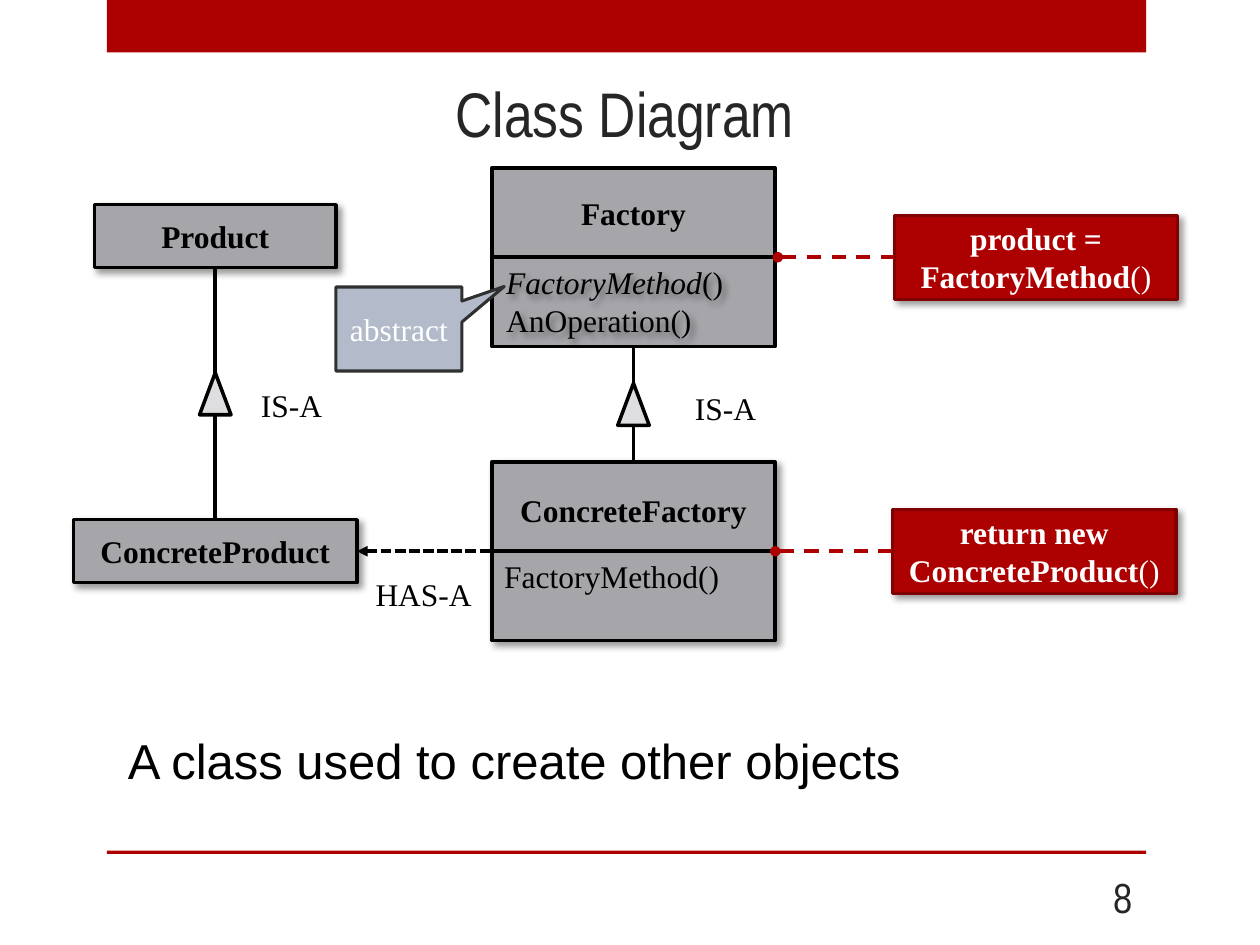
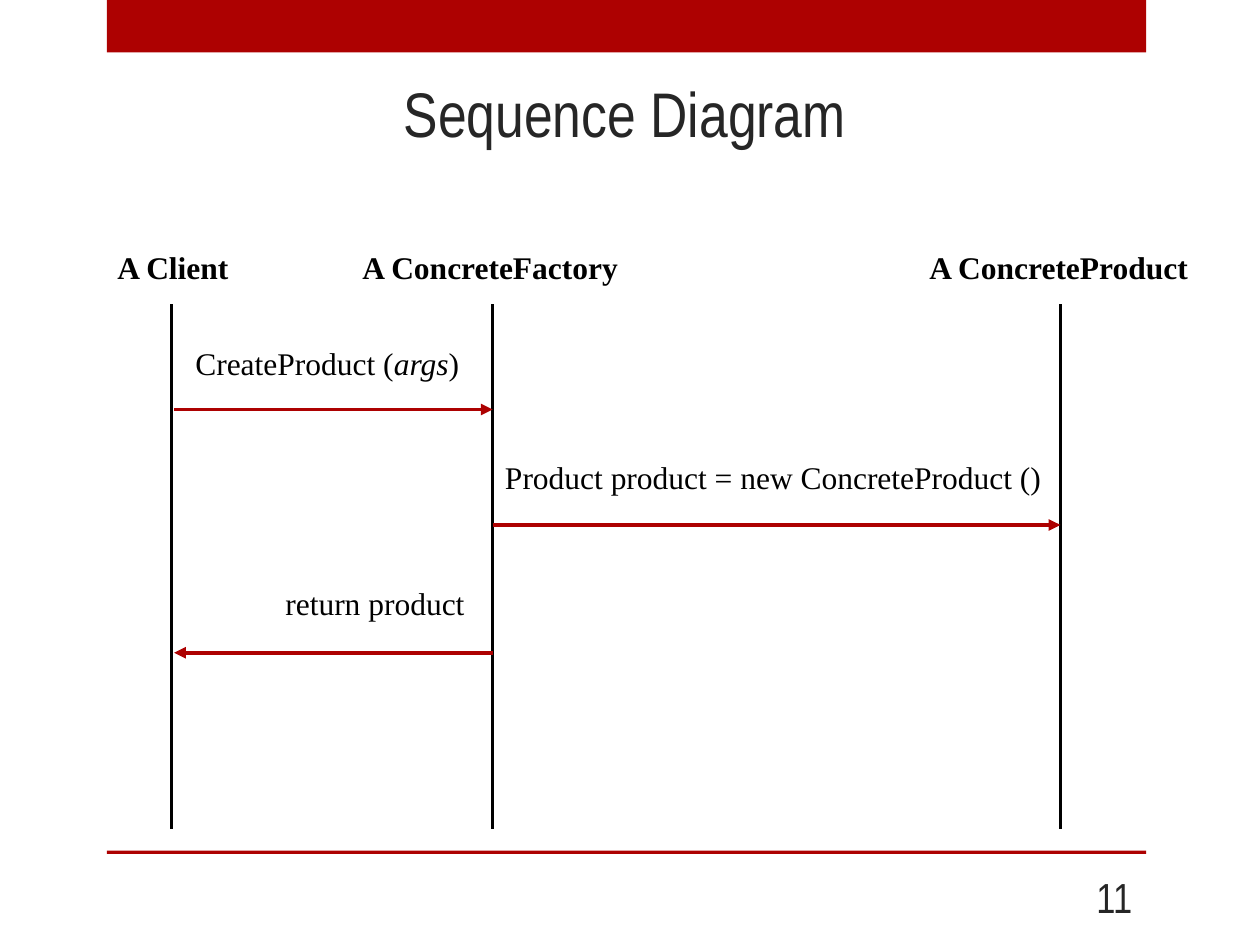
from dataclasses import dataclass

from pptx import Presentation
from pptx.dml.color import RGBColor
from pptx.enum.dml import MSO_LINE
from pptx.enum.shapes import MSO_CONNECTOR, MSO_SHAPE
from pptx.enum.text import MSO_ANCHOR, PP_ALIGN
from pptx.oxml.ns import qn
from pptx.util import Pt
from lxml.etree import SubElement


@dataclass(frozen=True)
class Theme:
    red: str = "AD0101"
    dark_red: str = "800101"
    ink: str = "262626"
    black: str = "000000"
    white: str = "FFFFFF"
    class_gray: str = "A5A5AA"
    arrow_gray: str = "DEDEE0"
    callout_blue: str = "B3BBCB"
    callout_line: str = "303030"
    heading_font: str = "Arial Narrow"
    summary_font: str = "Arial"
    diagram_font: str = "Times New Roman"
    title_size: float = 36
    number_size: float = 24
    summary_size: float = 28
    label_size: float = 18
    line_width: float = 2
    edge_width: float = 1.75
    message_width: float = 2.25


THEME = Theme()
LABEL_HEIGHT = 28.8

# Text is a list of paragraphs; each paragraph is a list of (words, style) runs.
# Boxes are left, top, width, height.
CLASSES = {
    "Product": {"box": (54, 117, 138, 36)},
    "ConcreteProduct": {"box": (42, 297, 162, 36)},
    "ConcreteFactory": {
        "box": (281, 264, 162, 102), "name_drop": 1.8,
        "methods": [[("FactoryMethod()", "")]],
    },
    "Factory": {
        "box": (281, 96, 162, 102), "shadow": False, "methods_shift": 1.2,
        "methods": [[("FactoryMethod", "i"), ("()", "")], [("AnOperation()", "")]],
    },
}
# class, left of the note, start of its dashed line, text
NOTES = [
    ("ConcreteFactory", 510, 443, [[("return new ConcreteProduct", "b"), ("()", "")]]),
    ("Factory", 511, 444.5, [[("product = FactoryMethod", "b"), ("()", "")]]),
]
# parent, child, top of the triangle
INHERITANCE = [("Factory", "ConcreteFactory", 219), ("Product", "ConcreteProduct", 213)]
# words, left, top, width
RELATION_LABELS = [("IS-A", 142, 217, 49.5), ("HAS-A", 207.5, 325, 70), ("IS-A", 390, 219, 49.5)]
SUMMARY = ("A class used to create other objects", (66, 414, 461.5, 41))
CALLOUT = ("abstract", (192, 164, 72, 48), (0.836, -0.507))

# name, x of the lifeline, left and width of the heading
LIFELINES = [
    ("A Client", 98, 60, 78.5),
    ("A ConcreteFactory", 281.5, 200, 162),
    ("A ConcreteProduct", 606, 524, 164),
]
# runs, start x, end x, y, left, top and width of the label
MESSAGES = [
    ([("CreateProduct (", ""), ("args", "i"), (")", "")], 99.5, 281.5, 234, 104.5, 193, 167),
    ([("Product product = new ConcreteProduct ()", "")], 281.5, 606, 300, 281.5, 258, 324),
    ([("return product", "")], 282, 99.5, 373, 156, 330, 118),
]


def color(value):
    return RGBColor.from_string(value)


def points(values):
    return [Pt(value) for value in values]


def add_shadow(shape):
    effects = SubElement(shape._element.spPr, qn("a:effectLst"))
    shadow = SubElement(effects, qn("a:outerShdw"), blurRad=str(Pt(4)), dist=str(Pt(3)),
                        dir=str(45 * 60000), algn="tl", rotWithShape="0")
    black = SubElement(shadow, qn("a:srgbClr"), val=THEME.black)
    SubElement(black, qn("a:alpha"), val="40000")


def write(shape, paragraphs, fill=THEME.black, size=THEME.label_size, font=THEME.diagram_font,
          align=PP_ALIGN.LEFT, anchor=MSO_ANCHOR.TOP, wrap=True):
    frame = shape.text_frame
    frame.word_wrap = wrap
    frame.vertical_anchor = anchor
    for index, runs in enumerate(paragraphs):
        paragraph = frame.add_paragraph() if index else frame.paragraphs[0]
        paragraph.alignment = align
        for words, style in runs:
            run = paragraph.add_run()
            run.text = words
            run.font.name = font
            run.font.size = Pt(size)
            run.font.bold = style == "b"
            run.font.italic = style == "i"
            run.font.color.rgb = color(fill)


def add_text(slide, box, paragraphs, **style):
    shape = slide.shapes.add_textbox(*points(box))
    write(shape, paragraphs, **style)
    return shape


def add_label(slide, left, top, width, runs):
    add_text(slide, (left, top, width, LABEL_HEIGHT), [runs], wrap=False)


def add_box(slide, box, fill, line=None, width=THEME.line_width, kind=MSO_SHAPE.RECTANGLE,
            shadow=False):
    shape = slide.shapes.add_shape(kind, *points(box))
    shape.fill.solid()
    shape.fill.fore_color.rgb = color(fill)
    if line:
        shape.line.color.rgb = color(line)
        shape.line.width = Pt(width)
    else:
        shape.line.fill.background()
    if shadow:
        add_shadow(shape)
    else:
        shape.shadow.inherit = False
    return shape


def add_line(slide, start, end, line=THEME.black, width=THEME.line_width, dash=None,
             head=None, tail=None):
    connector = slide.shapes.add_connector(MSO_CONNECTOR.STRAIGHT, *points(start + end))
    connector.line.color.rgb = color(line)
    connector.line.width = Pt(width)
    if dash:
        connector.line.dash_style = dash
    outline = connector.line._get_or_add_ln()
    for tag, kind in (("a:headEnd", head), ("a:tailEnd", tail)):
        if kind:
            SubElement(outline, qn(tag), type=kind)
    SubElement(connector._element.spPr, qn("a:effectLst"))


def add_slide(presentation, title, number):
    slide = presentation.slides.add_slide(presentation.slide_layouts[6])
    for top, height in ((0, 30), (486, 2)):
        add_box(slide, (61, top, 594, height), THEME.red)
    heading = {"fill": THEME.ink, "font": THEME.heading_font, "anchor": MSO_ANCHOR.MIDDLE}
    add_text(slide, (60, 38, 594, 52), [[(title, "")]], size=THEME.title_size,
             align=PP_ALIGN.CENTER, **heading)
    add_text(slide, (594, 498, 60, 29), [[(str(number), "")]], size=THEME.number_size,
             align=PP_ALIGN.RIGHT, **heading)
    return slide


def add_class(slide, name, box, methods=None, name_drop=0, methods_shift=0, shadow=True):
    left, top, width, height = box
    add_box(slide, box, THEME.class_gray, THEME.black, shadow=shadow)
    name_height = height / 2 if methods else height
    name_top = top + (name_height - LABEL_HEIGHT) / 2 + name_drop
    add_text(slide, (left, name_top, width, LABEL_HEIGHT), [[(name, "b")]],
             align=PP_ALIGN.CENTER)
    if methods:
        middle = top + name_height
        add_line(slide, (left, middle), (left + width, middle))
        method_text = add_text(slide, (left + methods_shift, middle, width, name_height), methods)
        if not shadow:
            add_shadow(method_text)


def build_class_diagram(presentation):
    slide = add_slide(presentation, "Class Diagram", 8)
    for name, details in CLASSES.items():
        add_class(slide, name, **details)

    centered = {"fill": THEME.white, "align": PP_ALIGN.CENTER, "anchor": MSO_ANCHOR.MIDDLE}
    for name, note_left, line_start, text in NOTES:
        _, top, _, height = CLASSES[name]["box"]
        middle = top + height / 2
        note = add_box(slide, (note_left, middle - 24, 162, 48), THEME.red, THEME.dark_red,
                       THEME.edge_width, shadow=True)
        write(note, text, **centered)
        add_line(slide, (line_start, middle), (note_left, middle), THEME.red,
                 dash=MSO_LINE.DASH, head="oval")

    for parent, child, triangle_top in INHERITANCE:
        left, top, width, height = CLASSES[parent]["box"]
        center = left + width / 2
        add_line(slide, (center, top + height), (center, CLASSES[child]["box"][1]))
        add_box(slide, (center - 9, triangle_top, 18, 24), THEME.arrow_gray, THEME.black,
                kind=MSO_SHAPE.ISOSCELES_TRIANGLE)

    left, top, width, height = CLASSES["ConcreteProduct"]["box"]
    middle = top + height / 2
    add_line(slide, (left + width, middle), (CLASSES["ConcreteFactory"]["box"][0], middle),
             dash=MSO_LINE.SQUARE_DOT, head="triangle")

    words, box = SUMMARY
    add_text(slide, box, [[(words, "")]], size=THEME.summary_size, font=THEME.summary_font,
             wrap=False)
    for words, left, top, width in RELATION_LABELS:
        add_label(slide, left, top, width, [(words, "")])

    words, box, pointer = CALLOUT
    callout = add_box(slide, box, THEME.callout_blue, THEME.callout_line, THEME.edge_width,
                      MSO_SHAPE.RECTANGULAR_CALLOUT)
    for index, offset in enumerate(pointer):
        callout.adjustments[index] = offset
    write(callout, [[(words, "")]], **centered)


def build_sequence_diagram(presentation):
    slide = add_slide(presentation, "Sequence Diagram", 11)
    for name, center, left, width in LIFELINES:
        add_line(slide, (center, 174), (center, 474))
        add_label(slide, left, 138, width, [(name, "b")])
    for runs, start, end, height, left, top, width in MESSAGES:
        add_line(slide, (start, height), (end, height), THEME.red, THEME.message_width,
                 tail="triangle")
        add_label(slide, left, top, width, runs)


def main():
    presentation = Presentation()
    presentation.slide_width, presentation.slide_height = Pt(720), Pt(540)
    build_class_diagram(presentation)
    build_sequence_diagram(presentation)
    presentation.save("out.pptx")


if __name__ == "__main__":
    main()
